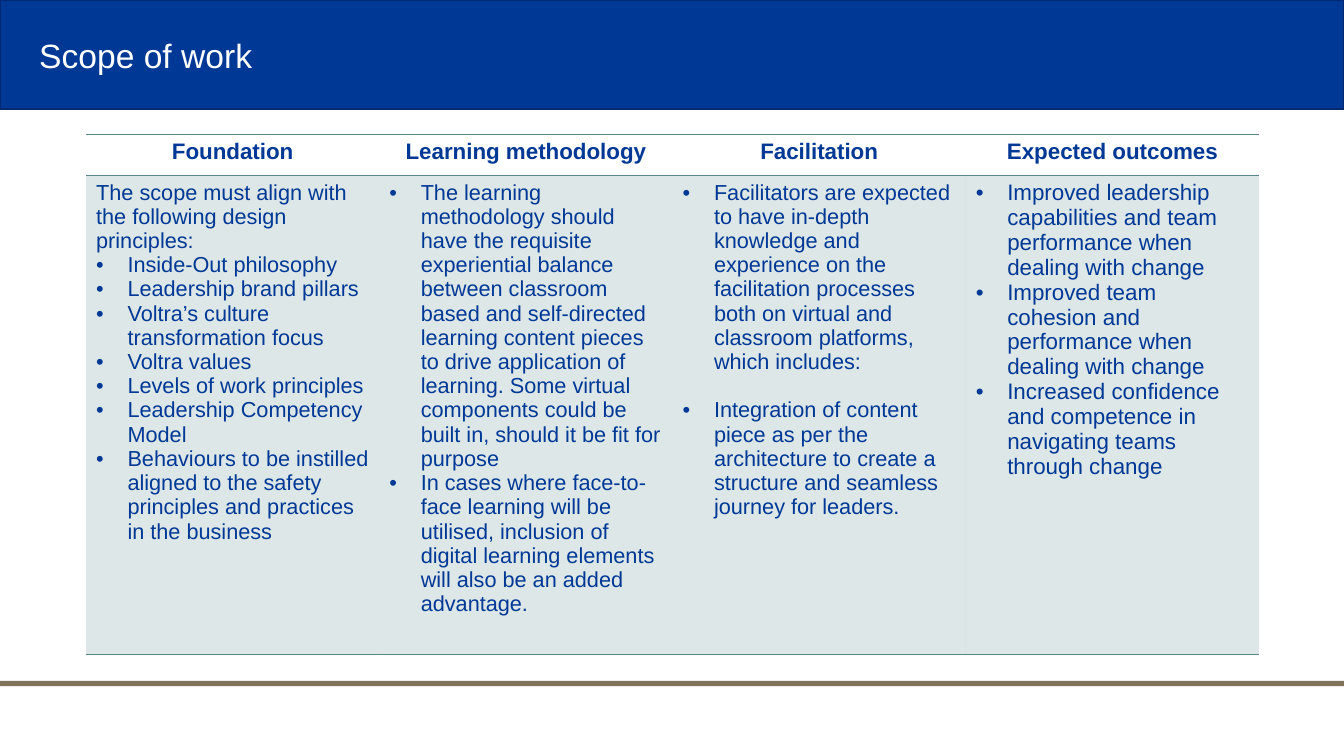
from lxml import etree
from pptx import Presentation
from pptx.dml.color import RGBColor
from pptx.enum.shapes import MSO_SHAPE
from pptx.enum.text import MSO_ANCHOR, PP_ALIGN
from pptx.oxml.ns import qn
from pptx.util import Cm, Pt

RECTANGLE = MSO_SHAPE.RECTANGLE
MIDDLE = MSO_ANCHOR.MIDDLE
LEFT, CENTER = PP_ALIGN.LEFT, PP_ALIGN.CENTER

FONT = "Arial"
COLORS = {
    "blue": "003896",
    "dark_blue": "00296F",
    "brown": "83725B",
    "teal": "598787",
    "white": "FFFFFF",
}
PLAIN_TABLE_STYLE = "{2D5ABB26-0587-4C30-8999-92F81FD0307C}"
SLIDE_WIDTH, SLIDE_HEIGHT = Cm(33.87), Cm(19.05)
HEADER_HEIGHT, BODY_HEIGHT = Cm(1.04), Cm(11.23)
COLUMN_WIDTH = Cm(7.39)
BULLET_INDENT = Cm(0.79)
BLANK_LINE = Pt(17.25)

# Each column: heading, text size, introduction, bullets, space between bullets
COLUMNS = [
    ("Foundation", 15.5, "The scope must align with the following design principles:", [
        "Inside-Out philosophy",
        "Leadership brand pillars",
        "Voltra’s culture transformation focus",
        "Voltra values",
        "Levels of work principles",
        "Leadership Competency Model",
        "Behaviours to be instilled aligned to the safety principles and practices "
        "in the business",
    ], 0),
    ("Learning methodology", 15.5, None, [
        "The learning methodology should have the requisite experiential balance between "
        "classroom based and self-directed learning content pieces to drive application of "
        "learning. Some virtual components could be built in, should it be fit for purpose",
        "In cases where face-to-face learning will be utilised, inclusion of digital "
        "learning elements will also be an added advantage.",
    ], 0),
    ("Facilitation", 15.5, None, [
        "Facilitators are expected to have in-depth knowledge and experience on the "
        "facilitation processes both on virtual and classroom platforms, which includes:",
        "Integration of content piece as per the architecture to create a structure and "
        "seamless journey for leaders.",
    ], BLANK_LINE),
    ("Expected outcomes", 16, None, [
        "Improved leadership capabilities and team performance when dealing with change",
        "Improved team cohesion and performance when dealing with change",
        "Increased confidence and competence in navigating teams through change",
    ], 0),
]


def color(name):
    return RGBColor.from_string(COLORS[name])


def style_paragraph(paragraph, size, color_name, bold=False, alignment=LEFT):
    paragraph.alignment = alignment
    font = paragraph.font
    font.name, font.size, font.bold = FONT, Pt(size), bold
    font.color.rgb = color(color_name)


def add_bar(slide, top, height, fill, outline=None):
    bar = slide.shapes.add_shape(RECTANGLE, 0, top, SLIDE_WIDTH, height)
    bar.shadow.inherit = False
    bar.fill.solid()
    bar.fill.fore_color.rgb = color(fill)
    if outline:
        bar.line.color.rgb = color(outline)
        bar.line.width = Pt(1)
    else:
        bar.line.fill.background()


def add_title(slide, text):
    box = slide.shapes.add_textbox(Cm(0.74), Cm(0.53), Cm(26.42), Cm(1.85))
    frame = box.text_frame
    frame.word_wrap = True
    frame.vertical_anchor = MIDDLE
    paragraph = frame.paragraphs[0]
    paragraph.text = text
    paragraph.line_spacing = 0.9
    style_paragraph(paragraph, 24, "white")


def add_border(cell, side):
    """Draw one cell edge; side is an element name such as a:lnT."""
    line = etree.SubElement(cell._tc.get_or_add_tcPr(), qn(side), w=str(Pt(1)))
    fill = etree.SubElement(line, qn("a:solidFill"))
    etree.SubElement(fill, qn("a:srgbClr"), val=COLORS["teal"])


def add_bullet(paragraph):
    properties = paragraph._p.get_or_add_pPr()
    properties.set("marL", str(BULLET_INDENT))
    properties.set("indent", str(-BULLET_INDENT))
    etree.SubElement(properties, qn("a:buFont"), typeface=FONT)
    etree.SubElement(properties, qn("a:buChar"), char="•")


def fill_heading_cell(cell, heading):
    add_border(cell, "a:lnT")
    add_border(cell, "a:lnB")
    cell.fill.background()
    paragraph = cell.text_frame.paragraphs[0]
    paragraph.text = heading
    style_paragraph(paragraph, 16, "blue", bold=True, alignment=CENTER)


def fill_body_cell(cell, size, introduction, bullets, gap):
    add_border(cell, "a:lnB")
    cell.fill.solid()
    cell.fill.fore_color.rgb = color("teal")
    tint = cell._tc.tcPr.find(qn("a:solidFill")).find(qn("a:srgbClr"))
    etree.SubElement(tint, qn("a:alpha"), val="20000")

    texts = [introduction] * bool(introduction) + bullets
    frame = cell.text_frame
    for index, text in enumerate(texts):
        paragraph = frame.add_paragraph() if index else frame.paragraphs[0]
        paragraph.text = text
        if text != introduction:
            add_bullet(paragraph)
        if index and gap:
            paragraph.space_before = gap
        style_paragraph(paragraph, size, "blue")


def add_scope_table(slide):
    frame = slide.shapes.add_table(
        2, len(COLUMNS), Cm(2.17), Cm(3.38),
        COLUMN_WIDTH * len(COLUMNS), HEADER_HEIGHT + BODY_HEIGHT)
    table = frame.table
    table.first_row = table.horz_banding = False
    table._tbl.tblPr.find(qn("a:tableStyleId")).text = PLAIN_TABLE_STYLE
    table.rows[0].height, table.rows[1].height = HEADER_HEIGHT, BODY_HEIGHT
    for index, (heading, *body) in enumerate(COLUMNS):
        table.columns[index].width = COLUMN_WIDTH
        fill_heading_cell(table.cell(0, index), heading)
        fill_body_cell(table.cell(1, index), *body)


def main():
    presentation = Presentation()
    presentation.slide_width, presentation.slide_height = SLIDE_WIDTH, SLIDE_HEIGHT
    slide = presentation.slides.add_slide(presentation.slide_layouts[6])
    add_bar(slide, 0, Cm(2.75), "blue", outline="dark_blue")
    add_bar(slide, Cm(17.16), Cm(0.13), "brown")
    add_title(slide, "Scope of work")
    add_scope_table(slide)
    presentation.save("out.pptx")


if __name__ == "__main__":
    main()
